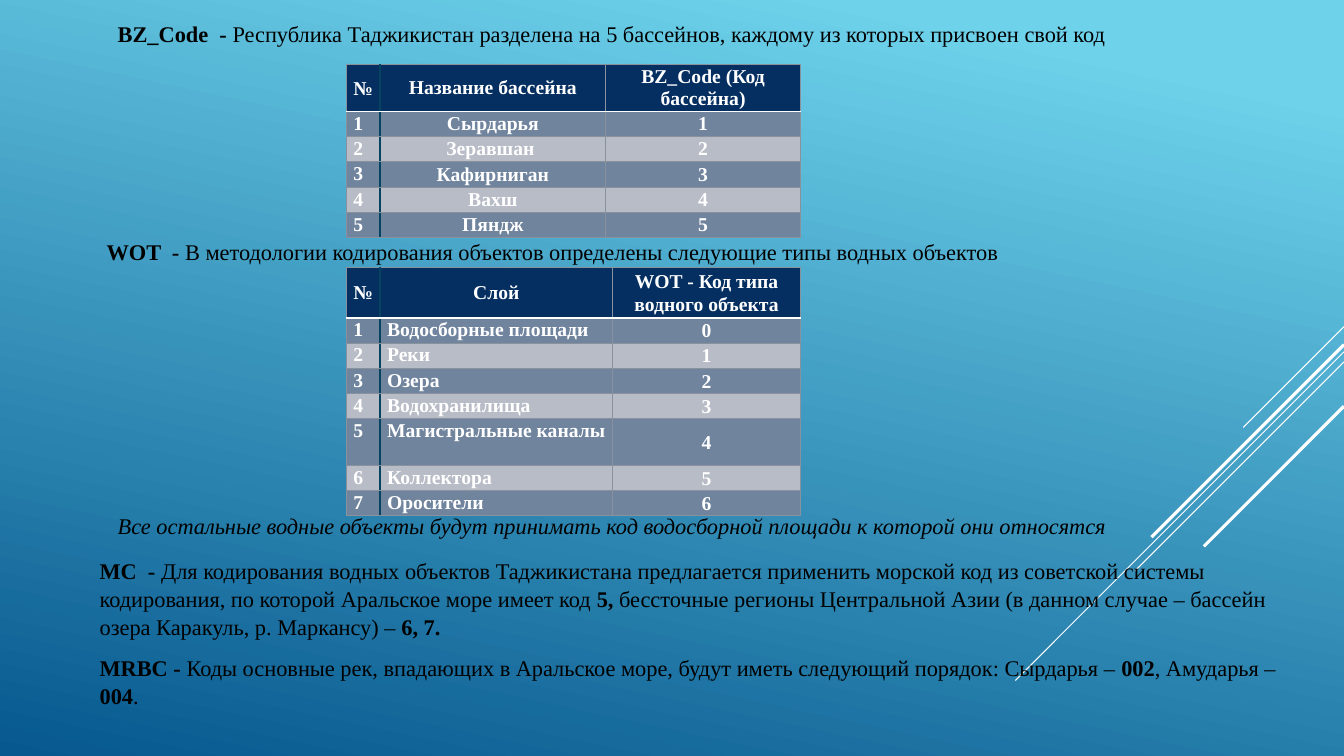
"""Build the slide that explains the water object coding scheme."""
from dataclasses import dataclass

from lxml.etree import SubElement
from pptx import Presentation
from pptx.dml.color import RGBColor
from pptx.enum.shapes import MSO_CONNECTOR
from pptx.enum.text import MSO_ANCHOR, PP_ALIGN
from pptx.oxml.ns import qn
from pptx.slide import Slide
from pptx.table import _Cell
from pptx.text.text import _Run
from pptx.util import Pt

FONT = "Times New Roman"
WHITE, BLACK, NAVY = "FFFFFF", "000000", "052F61"
DARK_ROW, LIGHT_ROW = "70849E", "B8BCC6"
GRID, NUMBER_EDGE = "89919C", "054361"


@dataclass(frozen=True)
class Ray:
    start: tuple[float, float]
    length: float
    weight: float


@dataclass(frozen=True)
class Piece:
    text: str
    bold: bool = False
    italic: bool = False


@dataclass(frozen=True)
class Note:
    left: float
    top: float
    height: float
    paragraphs: tuple[tuple[Piece, ...], ...]


@dataclass(frozen=True)
class CodeTable:
    top: float
    widths: tuple[float, ...]
    heights: tuple[float, ...]
    header: tuple[str, ...]
    rows: tuple[tuple[str, str], ...]
    name_alignment: PP_ALIGN
    name_anchor: MSO_ANCHOR
    body_margin: float
    line_spacing: float


RAYS = (
    Ray((960, 233.3), 72, 0.75),
    Ray((960, 251.3), 234.7, 0.75),
    Ray((960, 258.5), 149, 0.75),
    Ray((960, 246.2), 137.5, 2.25),
    Ray((960, 290.2), 100.1, 2.25),
)

NOTES = (
    Note(77, 10, 48, ((
        Piece("BZ_Code  - ", bold=True),
        Piece("Республика Таджикистан разделена на 5 бассейнов, каждому из которых присвоен свой код"),
    ),)),
    Note(69.1, 165.6, 48, ((
        Piece("WOT  - ", bold=True),
        Piece("В методологии кодирования объектов определены следующие типы водных объектов"),
    ),)),
    Note(77, 361.5, 34.6, ((
        Piece("Все остальные водные объекты будут принимать код водосборной площади "
              "к которой они относятся", italic=True),
    ),)),
    Note(64.1, 393.1, 154, (
        (
            Piece("MC  - ", bold=True),
            Piece("Для кодирования водных объектов Таджикистана предлагается применить морской код "
                  "из советской системы кодирования, по которой Аральское море имеет код "),
            Piece("5, ", bold=True),
            Piece("бессточные регионы Центральной Азии (в данном случае – бассейн озера Каракуль, "
                  "р. Маркансу) – "),
            Piece("6, 7.", bold=True),
        ),
        (
            Piece("MRBC - ", bold=True),
            Piece("Коды основные рек, впадающих в Аральское море, будут иметь следующий порядок: "
                  "Сырдарья – "),
            Piece("002", bold=True),
            Piece(", Амударья – "),
            Piece("004", bold=True),
            Piece("."),
        ),
    )),
)

BASINS = CodeTable(
    46, (24, 161.2, 139.2), (30.7,) + (16.55,) * 5,
    ("№", "Название бассейна", "BZ_Code (Код бассейна)"),
    (("Сырдарья", "1"), ("Зеравшан ", "2"), ("Кафирниган", "3"), ("Вахш", "4"), ("Пяндж", "5")),
    PP_ALIGN.CENTER, MSO_ANCHOR.MIDDLE, 0.75, 1.0,
)
LAYERS = CodeTable(
    191, (24, 166.1, 134.3), (34,) + (16.5,) * 4 + (33.5,) + (16.5,) * 2,
    ("№", "Слой", "WOT - Код типа водного объекта"),
    (("Водосборные площади", "0"), ("Реки", "1"), ("Озера", "2"), ("Водохранилища", "3"),
     ("Магистральные каналы", "4"), ("Коллектора", "5"), ("Оросители", "6")),
    PP_ALIGN.LEFT, MSO_ANCHOR.TOP, 5, 1.07,
)


def color(value: str) -> RGBColor:
    """Turn a hex string into a colour."""
    return RGBColor.from_string(value)


def format_run(run: _Run, size: float, fill: str, bold: bool, italic: bool = False) -> None:
    """Set the font of one run."""
    font = run.font
    font.name, font.size, font.bold, font.italic = FONT, Pt(size), bold, italic
    font.color.rgb = color(fill)


def draw_ray(slide: Slide, ray: Ray) -> None:
    """Draw a white diagonal line that falls to the left."""
    left, top = ray.start
    connector = slide.shapes.add_connector(
        MSO_CONNECTOR.STRAIGHT, Pt(left), Pt(top), Pt(left - ray.length), Pt(top + ray.length))
    connector.line.color.rgb = color(WHITE)
    connector.line.width = Pt(ray.weight)
    SubElement(connector._element.spPr, qn("a:effectLst"))


def draw_note(slide: Slide, note: Note) -> None:
    """Draw a text box with mixed runs."""
    shape = slide.shapes.add_textbox(Pt(note.left), Pt(note.top), Pt(855.4), Pt(note.height))
    text_frame = shape.text_frame
    text_frame.word_wrap = True
    for index, pieces in enumerate(note.paragraphs):
        paragraph = text_frame.add_paragraph() if index else text_frame.paragraphs[0]
        paragraph.space_before, paragraph.space_after = Pt(3.2), Pt(6)
        paragraph.line_spacing = 1.05
        for piece in pieces:
            run = paragraph.add_run()
            run.text = piece.text
            format_run(run, 16, BLACK, piece.bold, piece.italic)


def add_border(cell: _Cell, side: str, value: str, weight: float) -> None:
    """Add one cell border, translucent when it belongs to the grid."""
    properties = cell._tc.get_or_add_tcPr()
    line = SubElement(properties, qn(f"a:ln{side}"), w=str(Pt(weight)))
    fill = SubElement(SubElement(line, qn("a:solidFill")), qn("a:srgbClr"), val=value)
    if value == GRID:
        SubElement(fill, qn("a:alpha"), val="60000")


def draw_cell(cell: _Cell, text: str, row: int, column: int, source: CodeTable) -> None:
    """Fill, frame and format one table cell."""
    edge, grid, rule = (NUMBER_EDGE, 1.25), (GRID, 0.75), (WHITE, 1.25)
    add_border(cell, "L", *(edge if column == 1 else grid))
    add_border(cell, "R", *(edge if column == 0 else grid))
    add_border(cell, "T", *(rule if row == 1 else grid))
    add_border(cell, "B", *(rule if row == 0 else grid))
    cell.fill.solid()
    cell.fill.fore_color.rgb = color(NAVY if row == 0 else DARK_ROW if row % 2 else LIGHT_ROW)
    margin = 5 if row == 0 or column == 0 else source.body_margin
    cell.margin_left = cell.margin_right = Pt(margin)
    cell.margin_top = cell.margin_bottom = Pt(0)
    alignment, anchor = PP_ALIGN.CENTER, MSO_ANCHOR.MIDDLE
    if row and column == 0:
        alignment, anchor = PP_ALIGN.LEFT, MSO_ANCHOR.TOP
    elif row and column == 1:
        alignment, anchor = source.name_alignment, source.name_anchor
    cell.vertical_anchor = anchor
    cell.text_frame.text = text
    paragraph = cell.text_frame.paragraphs[0]
    paragraph.alignment = alignment
    paragraph.line_spacing = 1.07 if column == 0 else source.line_spacing
    format_run(paragraph.runs[0], 14, WHITE, True)


def draw_table(slide: Slide, source: CodeTable) -> None:
    """Draw a numbered table of codes."""
    rows = [source.header] + [(str(number), *row) for number, row in enumerate(source.rows, 1)]
    table = slide.shapes.add_table(
        len(rows), len(source.widths), Pt(247.5), Pt(source.top),
        Pt(sum(source.widths)), Pt(sum(source.heights))).table
    for column, width in zip(table.columns, source.widths):
        column.width = Pt(width)
    for row_index, (texts, height) in enumerate(zip(rows, source.heights)):
        table.rows[row_index].height = Pt(height)
        for column_index, text in enumerate(texts):
            draw_cell(table.cell(row_index, column_index), text, row_index, column_index, source)


def main() -> None:
    """Create and save the presentation."""
    presentation = Presentation()
    presentation.slide_width, presentation.slide_height = Pt(960), Pt(540)
    slide = presentation.slides.add_slide(presentation.slide_layouts[6])
    background = slide.background.fill
    background.gradient()
    background.gradient_angle = 258
    for stop, (position, value) in zip(background.gradient_stops, ((0.1, "6ED2EB"), (1, "06588E"))):
        stop.position = position
        stop.color.rgb = color(value)
    for ray in RAYS:
        draw_ray(slide, ray)
    for note in NOTES:
        draw_note(slide, note)
    for source in (LAYERS, BASINS):
        draw_table(slide, source)
    presentation.save("out.pptx")


if __name__ == "__main__":
    main()
